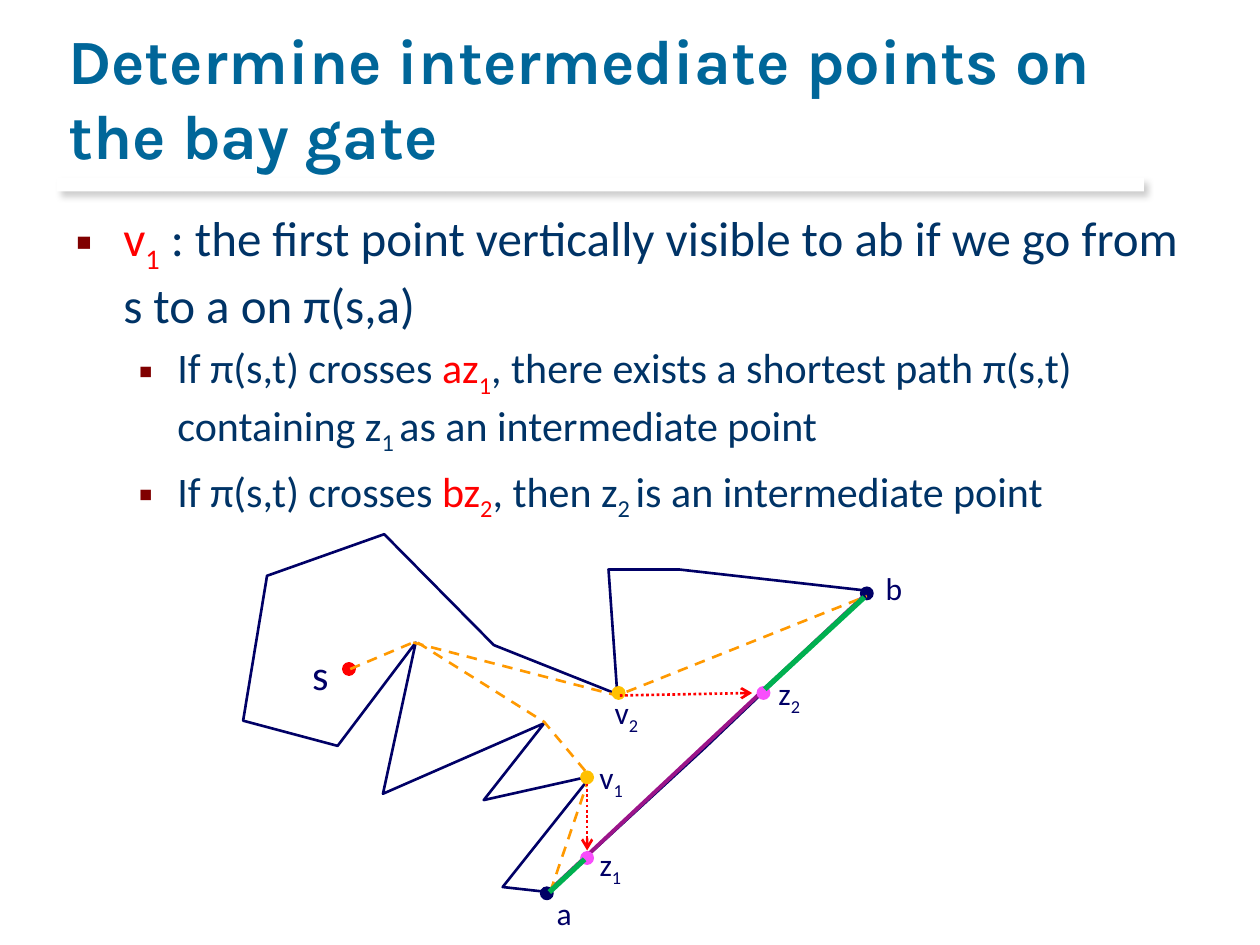
from dataclasses import dataclass

from lxml.etree import SubElement
from pptx import Presentation
from pptx.dml.color import RGBColor
from pptx.enum.dml import MSO_LINE
from pptx.enum.shapes import MSO_CONNECTOR, MSO_SHAPE
from pptx.enum.text import MSO_ANCHOR, MSO_AUTO_SIZE, PP_ALIGN
from pptx.oxml import parse_xml
from pptx.oxml.ns import nsdecls, qn
from pptx.util import Inches, Pt


@dataclass(frozen=True)
class Theme:
    title_font: str = "Karla"
    body_font: str = "Calibri"
    title: str = "006699"
    body: str = "003366"
    bullet: str = "800000"
    accent: str = "FF0000"
    outline: str = "000066"
    route: str = "FF9900"
    vertex: str = "FFC000"
    gate_point: str = "F84EFC"
    gate: str = "9C1489"
    gate_end: str = "00B050"
    white: str = "FFFFFF"
    shadow: str = "000000"
    title_size: int = 36
    point_size: int = 28
    subpoint_size: int = 24
    label_size: int = 18


THEME = Theme()

BULLETS = [
    (0, [("v", THEME.accent, False), ("1", THEME.accent, True),
         (" : the first point vertically visible to ab if we go from s to a on π(s,a)",
          THEME.body, False)]),
    (1, [("If π(s,t) crosses ", THEME.body, False), ("az", THEME.accent, False),
         ("1", THEME.accent, True),
         (", there exists a shortest path π(s,t) containing z", THEME.body, False),
         ("1 ", THEME.body, True), ("as an intermediate point", THEME.body, False)]),
    (1, [("If π(s,t) crosses ", THEME.body, False), ("bz", THEME.accent, False),
         ("2", THEME.accent, True), (", then z", THEME.body, False),
         ("2 ", THEME.body, True), ("is an intermediate point", THEME.body, False)]),
]

POLYGON = [(4.97, 0.45), (3.46, 0.28), (2.9, 0.28), (2.97, 1.27), (1.99, 0.88),
           (1.12, 0), (0.19, 0.33), (0, 1.48), (0.75, 1.68), (1.37, 0.86),
           (1.11, 2.06), (2.39, 1.5), (1.91, 2.11), (2.76, 1.92), (2.06, 2.8),
           (2.42, 2.84), (3.66, 1.7)]
ROUTES = [
    [(0.85, 1.07), (1.37, 0.85), (2.39, 1.49), (2.75, 1.92), (2.43, 2.86)],
    [(1.35, 0.86), (2.97, 1.28), (4.95, 0.49)],
]
END_DOTS = [(0.84, 1.07, THEME.accent), (2.41, 2.85, THEME.outline),
            (4.95, 0.47, THEME.outline)]
GATE_DOTS = [(2.73, 1.93, THEME.vertex), (2.98, 1.26, THEME.vertex),
             (2.73, 2.57, THEME.gate_point), (4.13, 1.26, THEME.gate_point)]
ARROWS = [((2.73, 1.98), (2.73, 2.51)), ((2.99, 1.28), (4.04, 1.26))]
GATE = ((2.42, 2.84), (4.97, 0.45))
GATE_ENDS = [((2.43, 2.84), (2.71, 2.58)), ((4.14, 1.23), (4.93, 0.5))]
LABELS = [
    ("s", "", 0.45, 0.86, 0.33, THEME.subpoint_size),
    ("a", "", 2.39, 2.81, 0.31, THEME.label_size),
    ("b", "", 5, 0.23, 0.33, THEME.label_size),
    ("v", "1", 2.73, 1.73, 0.4, THEME.label_size),
    ("z", "1", 2.73, 2.42, 0.39, THEME.label_size),
    ("v", "2", 2.85, 1.21, 0.4, THEME.label_size),
    ("z", "2", 4.15, 1.06, 0.39, THEME.label_size),
]


def rgb(colour):
    return RGBColor.from_string(colour)


def add_run(paragraph, text, font_name, size, colour, subscript=False):
    run = paragraph.add_run()
    run.text = text
    run.font.name = font_name
    run.font.size = Pt(size)
    run.font.color.rgb = rgb(colour)
    if subscript:
        run.font._element.set("baseline", "-25000")
    return run


def style_line(line, colour, width, dash=None):
    line.color.rgb = rgb(colour)
    line.width = Pt(width)
    if dash:
        line.dash_style = dash


def place_title(slide, left, top, width, height):
    title = slide.shapes.title
    title.left, title.top = Inches(left), Inches(top)
    title.width, title.height = Inches(width), Inches(height)
    title.text_frame.vertical_anchor = MSO_ANCHOR.BOTTOM
    heading = title.text_frame.paragraphs[0]
    heading.alignment = PP_ALIGN.LEFT
    run = add_run(heading, "Determine intermediate points on the bay gate",
                  THEME.title_font, THEME.title_size, THEME.title)
    run.font.bold = True
    run.font._element.set("spc", "10")


def place_rule(slide, left, top, width, height):
    rule = slide.shapes.add_shape(MSO_SHAPE.RECTANGLE, Inches(left), Inches(top),
                                  Inches(width), Inches(height))
    rule.fill.solid()
    rule.fill.fore_color.rgb = rgb(THEME.white)
    rule.line.fill.background()
    rule._element.spPr.append(parse_xml(
        f'<a:effectLst {nsdecls("a")}><a:outerShdw blurRad="{Pt(4)}" dist="{Pt(3)}" '
        f'dir="2700000" algn="tl" rotWithShape="0"><a:srgbClr val="{THEME.shadow}">'
        '<a:alpha val="20000"/></a:srgbClr></a:outerShdw></a:effectLst>'))


def place_bullets(slide, left, top, width, height):
    frame = slide.shapes.add_textbox(Inches(left), Inches(top), Inches(width),
                                     Inches(height)).text_frame
    frame.word_wrap = True
    for index, (level, runs) in enumerate(BULLETS):
        paragraph = frame.add_paragraph() if index else frame.paragraphs[0]
        size = THEME.subpoint_size if level else THEME.point_size
        margin, hanging = (0.81, 0.31) if level else (0.38, 0.38)
        paragraph.level = level
        paragraph.line_spacing = 1.0
        paragraph.space_before = Pt(size * 0.2)
        properties = paragraph._p.get_or_add_pPr()
        properties.set("marL", str(Inches(margin)))
        properties.set("indent", str(-Inches(hanging)))
        SubElement(SubElement(properties, qn("a:buClr")), qn("a:srgbClr"),
                   val=THEME.bullet)
        SubElement(properties, qn("a:buFont"), typeface="Arial")
        SubElement(properties, qn("a:buChar"), char="▪")
        for text, colour, subscript in runs:
            add_run(paragraph, text, THEME.body_font, size, colour, subscript)


def place_diagram(slide, left, top):
    shapes = slide.shapes

    def at(point):
        return Inches(left + point[0]), Inches(top + point[1])

    def add_outline(points, colour, close=False, dash=None):
        builder = shapes.build_freeform(*at(points[0]))
        builder.add_line_segments([at(point) for point in points[1:]], close=close)
        outline = builder.convert_to_shape()
        outline.shadow.inherit = False
        if close:
            outline.fill.solid()
            outline.fill.fore_color.rgb = rgb(THEME.white)
        else:
            outline.fill.background()
        style_line(outline.line, colour, 1.5, dash)

    def add_segment(start, end, colour, width, dash=None, arrow=False):
        segment = shapes.add_connector(MSO_CONNECTOR.STRAIGHT, *at(start), *at(end))
        style_line(segment.line, colour, width, dash)
        if arrow:
            SubElement(segment.line._get_or_add_ln(), qn("a:tailEnd"), type="arrow")
        SubElement(segment._element.spPr, qn("a:effectLst"))

    def add_dot(x, y, colour, diameter=0.1):
        corner = at((x - diameter / 2, y - diameter / 2))
        dot = shapes.add_shape(MSO_SHAPE.OVAL, *corner, Inches(diameter), Inches(diameter))
        dot.shadow.inherit = False
        dot.fill.solid()
        dot.fill.fore_color.rgb = rgb(colour)
        style_line(dot.line, colour, 0.75)

    def add_label(letter, index, x, y, width, size):
        height = 0.5 if size > THEME.label_size else 0.4
        frame = shapes.add_textbox(*at((x, y)), Inches(width), Inches(height)).text_frame
        frame.word_wrap = False
        frame.auto_size = MSO_AUTO_SIZE.SHAPE_TO_FIT_TEXT
        paragraph = frame.paragraphs[0]
        add_run(paragraph, letter, THEME.body_font, size, THEME.outline)
        if index:
            add_run(paragraph, index, THEME.body_font, size, THEME.outline, True)

    add_outline(POLYGON, THEME.outline, close=True)
    add_segment(*GATE, THEME.gate, 2.25)
    for dot in END_DOTS:
        add_dot(*dot)
    for route in ROUTES:
        add_outline(route, THEME.route, dash=MSO_LINE.DASH)
    for dot in GATE_DOTS:
        add_dot(*dot)
    for start, end in ARROWS:
        add_segment(start, end, THEME.accent, 1.5, MSO_LINE.ROUND_DOT, arrow=True)
    for label in LABELS:
        add_label(*label)
    for start, end in GATE_ENDS:
        add_segment(start, end, THEME.gate_end, 3)


def main():
    deck = Presentation()
    deck.slide_width, deck.slide_height = Inches(10), Inches(7.5)
    slide = deck.slides.add_slide(deck.slide_layouts[5])
    place_rule(slide, 0.45, 1.41, 8.63, 0.11)
    place_title(slide, 0.44, 0.17, 8.5, 1.25)
    place_bullets(slide, 0.5, 1.6, 8.99, 0.65)
    place_diagram(slide, 1.93, 4.24)
    deck.save("out.pptx")


if __name__ == "__main__":
    main()
